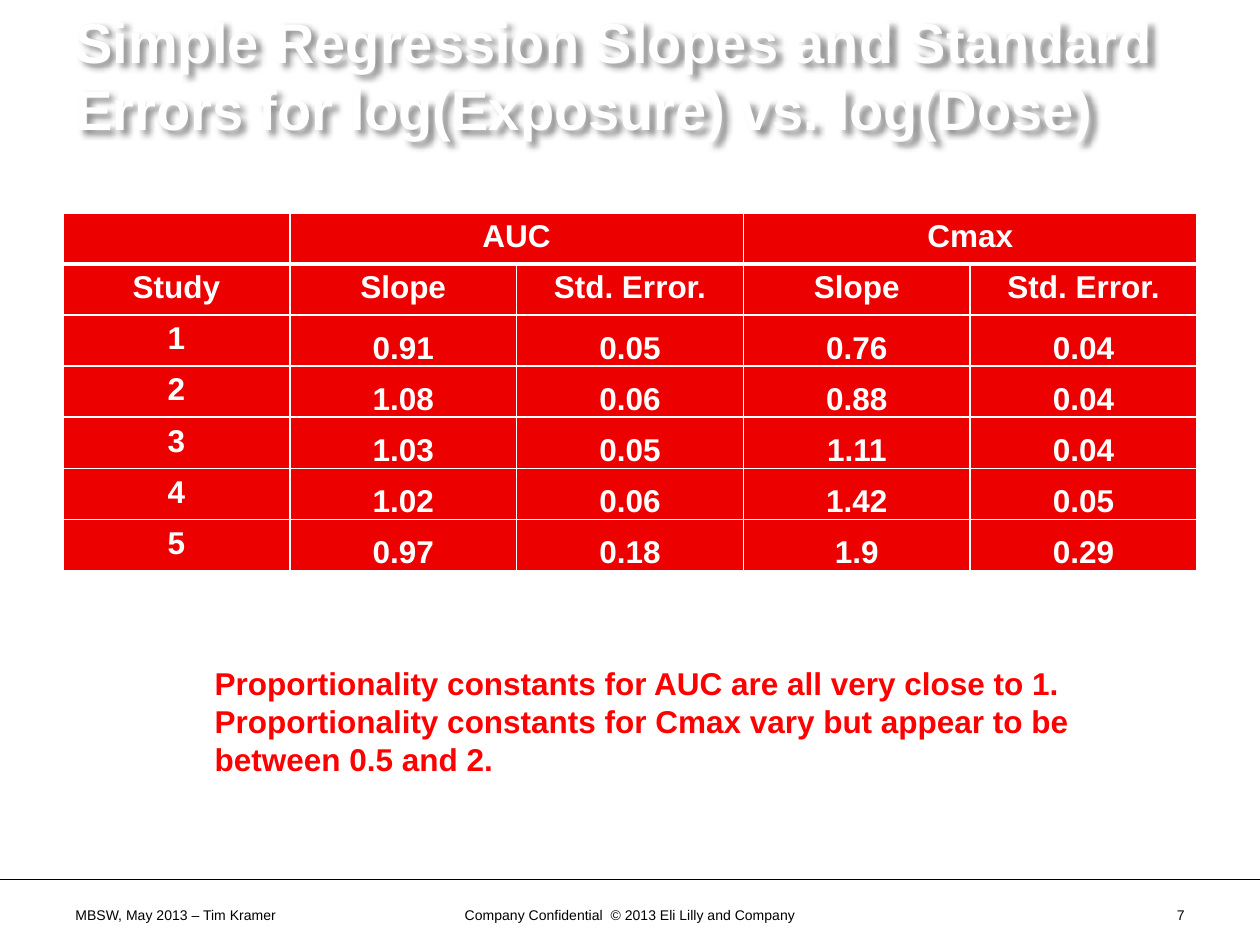
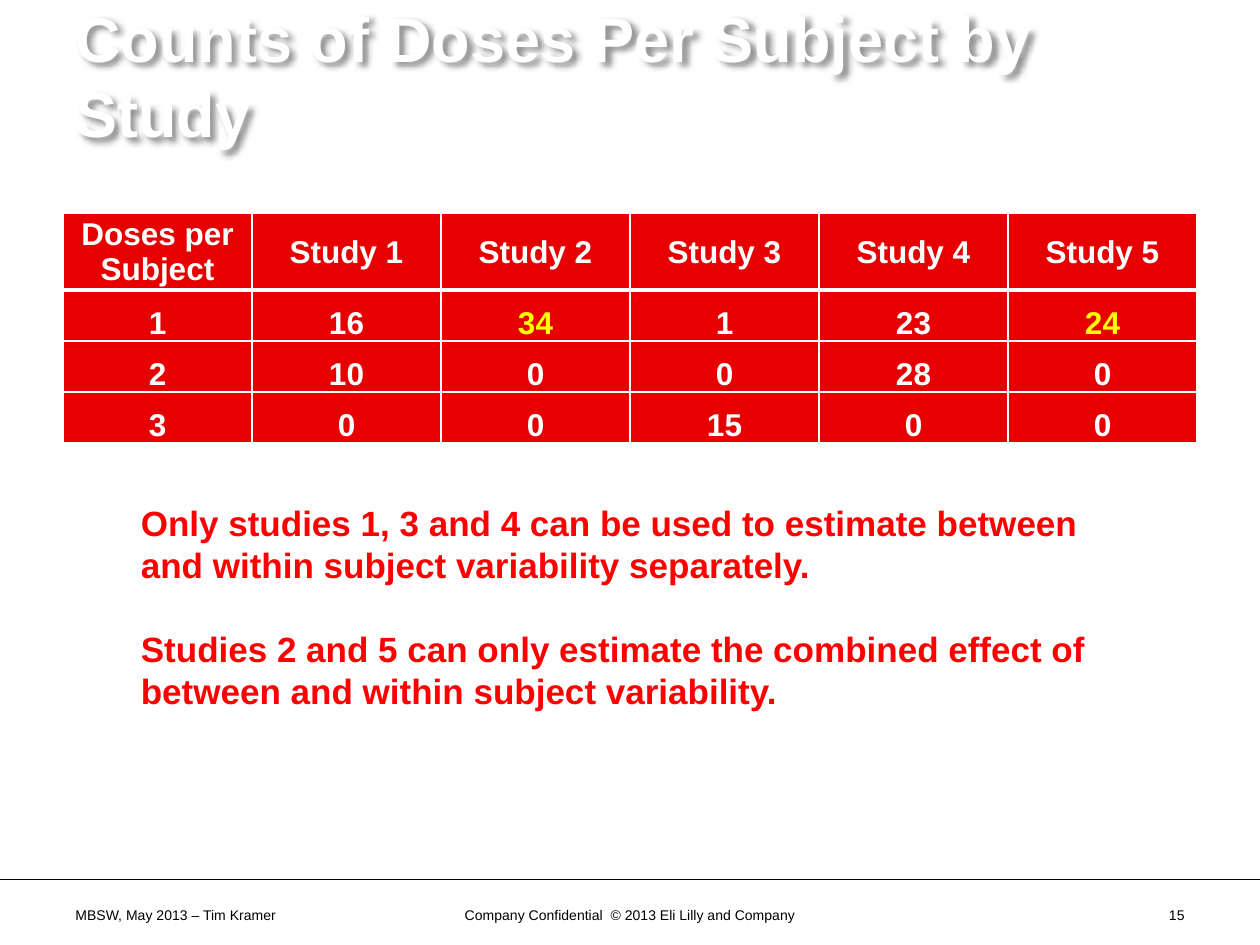
from pptx import Presentation
from pptx.dml.color import RGBColor
from pptx.enum.shapes import MSO_CONNECTOR
from pptx.enum.text import MSO_ANCHOR, PP_ALIGN
from pptx.oxml import parse_xml
from pptx.oxml.ns import nsdecls
from pptx.util import Cm, Pt

BLACK = RGBColor(0x00, 0x00, 0x00)
WHITE = RGBColor(0xFF, 0xFF, 0xFF)
YELLOW = RGBColor(0xFF, 0xFF, 0x00)
NOTE_RED = RGBColor(0xFF, 0x00, 0x00)
SLOPES_RED = RGBColor(0xEC, 0x00, 0x00)
COUNTS_RED = RGBColor(0xE6, 0x00, 0x00)

SLIDE_W, SLIDE_H = Cm(25.4), Cm(19.05)
LEFT, WIDTH = Cm(1.27), Cm(22.86)
ROW_H = Cm(1.03)
RULE_Y = Cm(17.73)
FOOTER_Y, FOOTER_H = Cm(18.16), Cm(0.62)
TIGHT = {"margin_left": Cm(0.03), "margin_top": Cm(0.03),
         "margin_right": Cm(0.03), "margin_bottom": 0}

SLOPES = [
    ["", "AUC", "", "Cmax", ""],
    ["Study", "Slope", "Std. Error.", "Slope", "Std. Error."],
    ["1", "0.91", "0.05", "0.76", "0.04"],
    ["2", "1.08", "0.06", "0.88", "0.04"],
    ["3", "1.03", "0.05", "1.11", "0.04"],
    ["4", "1.02", "0.06", "1.42", "0.05"],
    ["5", "0.97", "0.18", "1.9", "0.29"],
]
COUNTS = [
    ["Doses per Subject"] + [f"Study {n}" for n in range(1, 6)],
    ["1", "16", "34", "1", "23", "24"],
    ["2", "10", "0", "0", "28", "0"],
    ["3", "0", "0", "15", "0", "0"],
]
SINGLE_DOSE_CELLS = {(1, 2), (1, 5)}


def apply(target, formats):
    for name, value in formats.items():
        setattr(target, name, value)


def write(p, text, size, color, bold=True, align=PP_ALIGN.LEFT):
    p.alignment = align
    r = p.add_run()
    r.text = text
    apply(r.font, {"name": "Arial", "size": Pt(size), "bold": bold})
    r.font.color.rgb = color


def add_text(s, box, paragraphs, size, color, gap=0, anchor=MSO_ANCHOR.TOP, **style):
    sp = s.shapes.add_textbox(*box)
    tf = sp.text_frame
    apply(tf, {"word_wrap": True, "vertical_anchor": anchor})
    for i, text in enumerate(paragraphs):
        p = tf.add_paragraph() if i else tf.paragraphs[0]
        if i:
            p.space_before = Pt(gap)
        write(p, text, size, color, **style)
    return sp


def add_title(s, text, size):
    sp = add_text(s, (LEFT, Cm(-0.08), WIDTH, Cm(3.18)), [text], size, WHITE,
                  anchor=MSO_ANCHOR.MIDDLE)
    sp.element.spPr.append(parse_xml(
        f'<a:effectLst {nsdecls("a")}><a:outerShdw blurRad="38100" dist="38100" '
        'dir="2700000" algn="tl" rotWithShape="0"><a:srgbClr val="000000">'
        '<a:alpha val="43000"/></a:srgbClr></a:outerShdw></a:effectLst>'))


def add_footer(s, number):
    rule = s.shapes.add_connector(MSO_CONNECTOR.STRAIGHT, 0, RULE_Y, SLIDE_W, RULE_Y)
    rule.line.color.rgb = BLACK
    rule.line.width = Pt(0.5)
    rule.element.spPr.append(parse_xml(f'<a:effectLst {nsdecls("a")}/>'))
    for x, w, text, align in (
        (LEFT, Cm(5.92), "MBSW, May 2013 – Tim Kramer", PP_ALIGN.LEFT),
        (Cm(8.68), Cm(8.05), "Company Confidential  © 2013 Eli Lilly and Company",
         PP_ALIGN.CENTER),
        (Cm(18.21), Cm(5.92), str(number), PP_ALIGN.RIGHT),
    ):
        add_text(s, (x, FOOTER_Y, w, FOOTER_H), [text], 8, BLACK,
                 bold=False, align=align)


def set_borders(cell, row):
    widths = {"L": 1, "R": 1, "T": 3 if row == 1 else 1, "B": 3 if row == 0 else 1}
    tc_pr = cell._tc.get_or_add_tcPr()
    for side, width in widths.items():
        tc_pr.append(parse_xml(
            f'<a:ln{side} {nsdecls("a")} w="{Pt(width)}"><a:solidFill>'
            f'<a:srgbClr val="{WHITE}"/></a:solidFill></a:ln{side}>'))


def add_table(s, rows, fill, cell_format, merges=(), highlights=()):
    shape = s.shapes.add_table(len(rows), len(rows[0]), LEFT, Cm(4.29),
                               WIDTH, ROW_H * len(rows))
    table = shape.table
    apply(table, {"first_row": False, "horz_banding": False})
    for i, row in enumerate(rows):
        table.rows[i].height = ROW_H
        for j, text in enumerate(row):
            cell = table.cell(i, j)
            set_borders(cell, i)
            cell.fill.solid()
            cell.fill.fore_color.rgb = fill
            apply(cell, cell_format(i, j))
            if text:
                color = YELLOW if (i, j) in highlights else WHITE
                write(cell.text_frame.paragraphs[0], text, 18, color,
                      align=PP_ALIGN.CENTER)
    for first, last in merges:
        table.cell(*first).merge(table.cell(*last))


def slopes_format(row, col):
    is_value = row > 1 and col > 0
    return {**TIGHT, "vertical_anchor": MSO_ANCHOR.BOTTOM} if is_value else {}


def counts_format(row, col):
    anchor = MSO_ANCHOR.BOTTOM if row else MSO_ANCHOR.MIDDLE
    return {**TIGHT, "vertical_anchor": anchor}


def add_slide(prs, title, title_size, number):
    s = prs.slides.add_slide(prs.slide_layouts[6])
    add_title(s, title, title_size)
    add_footer(s, number)
    return s


def main():
    prs = Presentation()
    apply(prs, {"slide_width": SLIDE_W, "slide_height": SLIDE_H})

    s = add_slide(prs, "Simple Regression Slopes and Standard Errors for "
                  "log(Exposure) vs. log(Dose)", 32, 7)
    add_table(s, SLOPES, SLOPES_RED, slopes_format,
              merges=[((0, 1), (0, 2)), ((0, 3), (0, 4))])
    add_text(s, (Cm(4.08), Cm(13.26), Cm(19.76), Cm(2.57)), [
        "Proportionality constants for AUC are all very close to 1. "
        "Proportionality constants for Cmax vary but appear to be "
        "between 0.5 and 2."], 18, NOTE_RED)

    s = add_slide(prs, "Counts of Doses Per Subject by Study", 36, 15)
    add_table(s, COUNTS, COUNTS_RED, counts_format, highlights=SINGLE_DOSE_CELLS)
    add_text(s, (Cm(2.59), Cm(9.98), Cm(19.76), Cm(4.52)), [
        "Only studies 1, 3 and 4 can be used to estimate between and within "
        "subject variability separately.",
        "Studies 2 and 5 can only estimate the combined effect of between and "
        "within subject variability."], 20, NOTE_RED, gap=24)

    prs.save("out.pptx")


if __name__ == "__main__":
    main()
